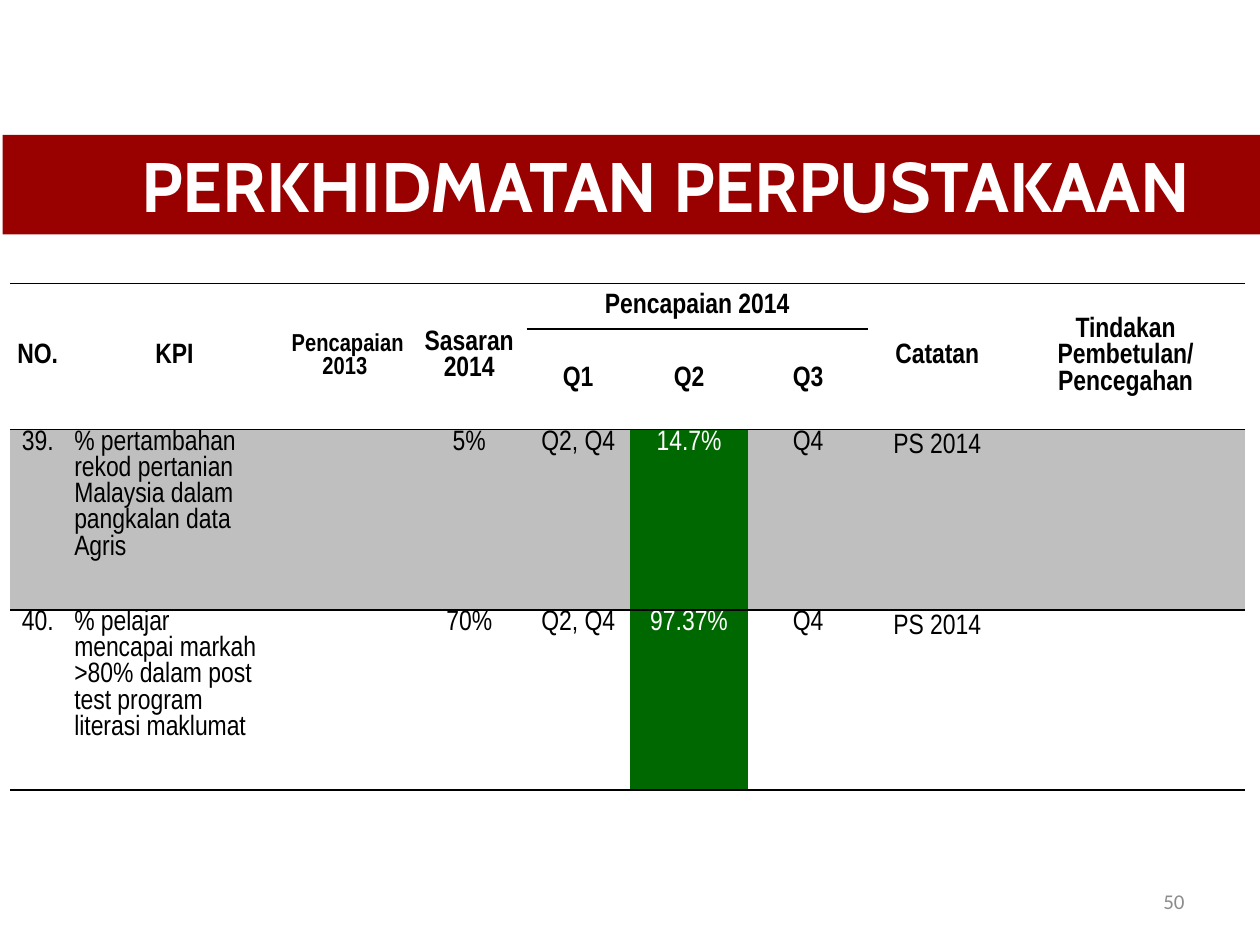
from lxml import etree
from pptx import Presentation, util as u
from pptx.dml.color import RGBColor
from pptx.enum import text
from pptx.oxml.ns import qn

BLACK, WHITE, GREY = "000000", "FFFFFF", "BFBFBF"
RED, GREEN, NUMBER_GREY = "990000", "006800", "8C8C8C"
CENTER, LEFT, RIGHT = text.PP_ALIGN.CENTER, text.PP_ALIGN.LEFT, text.PP_ALIGN.RIGHT
PLAIN_TABLE = "{2D5ABB26-0587-4C30-8999-92F81FD0307C}"

HEADINGS = {0: "NO.", 1: "KPI", 2: "Pencapaian 2013 ", 3: "Sasaran 2014",
            4: "Pencapaian 2014", 7: "Catatan", 8: "Tindakan Pembetulan/ Pencegahan"}
QUARTERS = {4: "Q1", 5: "Q2", 6: "Q3"}
KPIS = [
    ["39.", "% pertambahan rekod pertanian Malaysia dalam pangkalan data Agris",
     "", "5%", "Q2, Q4", "14.7%", "Q4", "PS 2014", ""],
    ["40.", "% pelajar mencapai markah >80% dalam post test program literasi maklumat",
     "", "70%", "Q2, Q4", "97.37%", "Q4", "PS 2014", ""],
]
COLUMNS = [0.44, 1.73, 1.02, 0.91, 0.82, 0.94, 0.95, 1.1, 1.89]
ROWS = [0.36, 0.64, 1.43, 1.43]
KPI, PREVIOUS, ACHIEVED, REMARK = 1, 2, 5, 7


def color(value):
    return RGBColor.from_string(value)


class Page:
    font = "Arial Narrow"
    size = 16

    def __init__(self, slide):
        self.slide = slide

    def style(self, target, size=None, name=None, fill=BLACK, bold=False):
        font = target.font
        font.size, font.name, font.bold = u.Pt(size or self.size), name or self.font, bold
        font.color.rgb = color(fill)

    def title(self, words, left, top, width, height):
        banner = self.slide.shapes.title
        banner.left, banner.top = u.Inches(left), u.Inches(top)
        banner.width, banner.height = u.Inches(width), u.Inches(height)
        banner.fill.solid()
        banner.fill.fore_color.rgb = color(RED)
        frame = banner.text_frame
        frame.text = words
        frame.auto_size = text.MSO_AUTO_SIZE.NONE
        frame.vertical_anchor = text.MSO_ANCHOR.MIDDLE
        paragraph = frame.paragraphs[0]
        paragraph.alignment = LEFT
        tabs = etree.SubElement(paragraph._p.get_or_add_pPr(), qn("a:tabLst"))
        etree.SubElement(tabs, qn("a:tab"), pos=str(int(u.Inches(1))), algn="l")
        self.style(paragraph, 40, "Cabin", WHITE, True)

    def label(self, words, *box):
        frame = self.slide.shapes.add_textbox(*map(u.Inches, box)).text_frame
        frame.word_wrap = True
        frame.vertical_anchor = text.MSO_ANCHOR.MIDDLE
        frame.text = words
        frame.paragraphs[0].alignment = RIGHT
        self.style(frame.paragraphs[0], 12, "Calibri", NUMBER_GREY)

    def table(self, left, top, columns, rows):
        box = map(u.Inches, (left, top, sum(columns), sum(rows)))
        grid = self.slide.shapes.add_table(len(rows), len(columns), *box).table
        grid.first_row = grid.horz_banding = False
        grid._tbl.tblPr.find(qn("a:tableStyleId")).text = PLAIN_TABLE
        for column, width in zip(grid.columns, columns):
            column.width = u.Inches(width)
        for row, height in zip(grid.rows, rows):
            row.height = u.Inches(height)
        return grid

    def rule(self, cell, edge):
        line = etree.SubElement(cell._tc.get_or_add_tcPr(), qn("a:" + edge),
                                w=str(int(u.Pt(1))))
        fill = etree.SubElement(line, qn("a:solidFill"))
        etree.SubElement(fill, qn("a:srgbClr"), val=BLACK)

    def cell(self, cell, words, margin, band=None, anchor=text.MSO_ANCHOR.TOP,
             align=CENTER, spacing=None, **font):
        cell.margin_left = cell.margin_right = u.Inches(margin)
        cell.margin_top = cell.margin_bottom = 0
        cell.vertical_anchor = anchor
        if band:
            cell.fill.solid()
            cell.fill.fore_color.rgb = color(band)
        else:
            cell.fill.background()
        if not words:
            return
        paragraph = cell.text_frame.paragraphs[0]
        paragraph.alignment = align
        if spacing:
            paragraph.line_spacing = spacing
        # Row heights are measured from run fonts
        run = paragraph.add_run()
        run.text = words
        self.style(run, **font)


def main():
    deck = Presentation()
    deck.slide_width, deck.slide_height = u.Inches(10), u.Inches(7.5)
    page = Page(deck.slides.add_slide(deck.slide_layouts[5]))

    # Title banner and page number
    page.title("\tPERKHIDMATAN PERPUSTAKAAN", 0.02, 1.07, 10, 0.79)
    page.label("50", 7.17, 6.95, 2.33, 0.4)

    # Table with horizontal rules only
    grid = page.table(0.08, 2.25, COLUMNS, ROWS)
    for c in range(len(COLUMNS)):
        for r in (0, 2, 3):
            page.rule(grid.cell(r, c), "lnT")
        page.rule(grid.cell(3, c), "lnB")
    for c in QUARTERS:
        page.rule(grid.cell(1, c), "lnT")

    # Two-level header
    for r, headings in enumerate((HEADINGS, QUARTERS)):
        for c in range(len(COLUMNS)):
            page.cell(grid.cell(r, c), headings.get(c, ""), 0.04, bold=True,
                      anchor=text.MSO_ANCHOR.MIDDLE, size=14 if c == PREVIOUS else None)
    for c in HEADINGS:
        end = (0, max(QUARTERS)) if c in QUARTERS else (1, c)
        grid.cell(0, c).merge(grid.cell(*end))

    # KPI rows, with the achieved quarter in green
    for r, (values, band) in enumerate(zip(KPIS, (GREY, None)), start=2):
        for c, value in enumerate(values):
            achieved = c == ACHIEVED
            page.cell(grid.cell(r, c), value, 0.07 if c < min(QUARTERS) else 0.06,
                      band=GREEN if achieved else band,
                      align=LEFT if c == KPI else CENTER,
                      spacing=1.15 if c == REMARK else None,
                      fill=WHITE if achieved else BLACK)

    deck.save("out.pptx")


if __name__ == "__main__":
    main()
